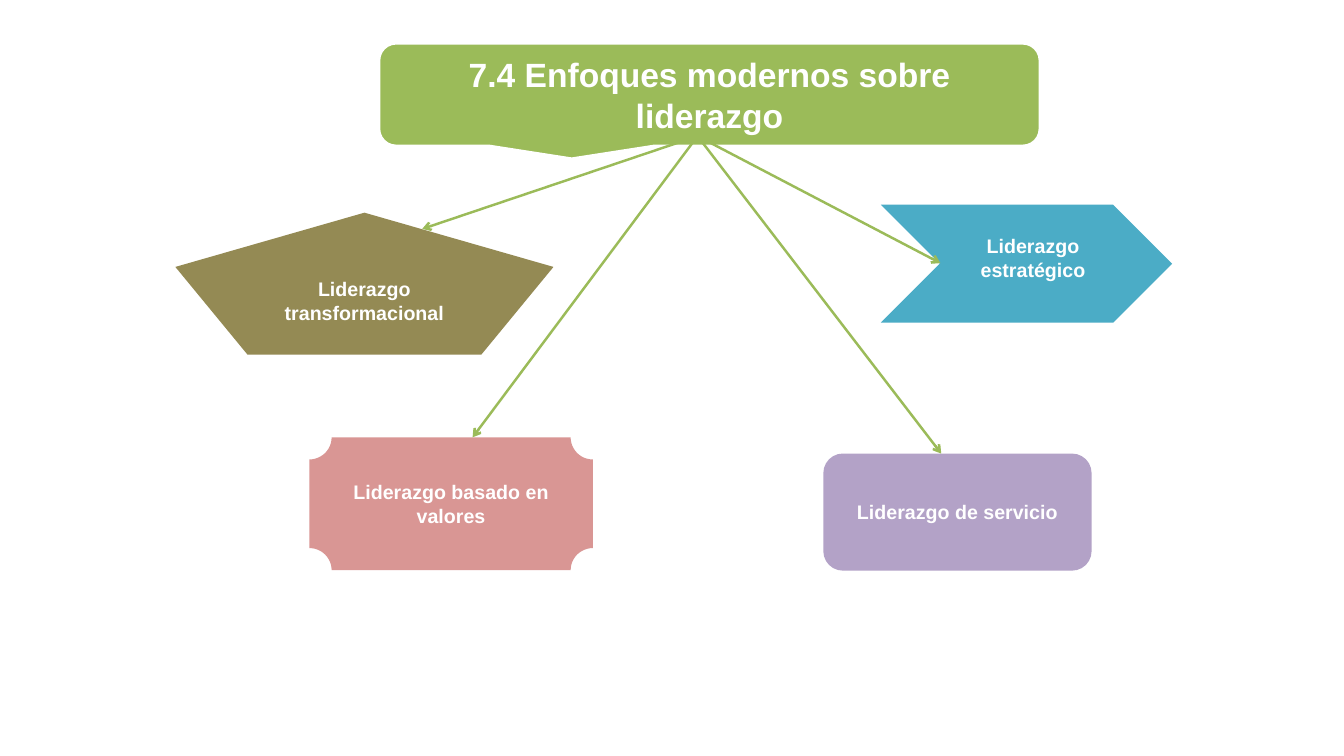
import pptx
import pptx.util
from lxml import etree
from pptx.dml.color import RGBColor
from pptx.enum.shapes import MSO_CONNECTOR, MSO_SHAPE
from pptx.enum.text import MSO_ANCHOR, MSO_AUTO_SIZE, PP_ALIGN
from pptx.oxml.ns import qn

Cm, Pt = pptx.util.Cm, pptx.util.Pt

WHITE = RGBColor(0xFF, 0xFF, 0xFF)
GREEN = RGBColor(0x9B, 0xBB, 0x59)
PURPLE = RGBColor(0xB3, 0xA2, 0xC7)
BLUE = RGBColor(0x4B, 0xAC, 0xC6)
PINK = RGBColor(0xD9, 0x96, 0x94)
OLIVE = RGBColor(0x94, 0x8A, 0x54)


def write_text(sp, text, size):
    tf = sp.text_frame
    tf.text = text
    tf.word_wrap = True
    p = tf.paragraphs[0]
    p.alignment = PP_ALIGN.CENTER
    p.font.name = "Arial"
    p.font.size = Pt(size)
    p.font.bold = True
    p.font.color.rgb = WHITE
    return tf


def add_filled_shape(kind, box, color):
    sp = s.shapes.add_shape(kind, *map(Cm, box))
    sp.shadow.inherit = False
    sp.fill.solid()
    sp.fill.fore_color.rgb = color
    sp.line.fill.background()
    return sp


prs = pptx.Presentation()
prs.slide_width, prs.slide_height = Cm(33.87), Cm(19.05)
s = prs.slides.add_slide(prs.slide_layouts[5])

# Title on its callout
callout = add_filled_shape(
    MSO_SHAPE.ROUNDED_RECTANGULAR_CALLOUT, (9.55, 1.09, 16.66, 2.59), GREEN)
callout.line.color.rgb = WHITE
callout.line.width = Pt(2)

title = s.shapes.title
title.left, title.top, title.width, title.height = map(Cm, (9.75, 1.09, 16.26, 2.59))
tf = write_text(title, "7.4 Enfoques modernos sobre liderazgo", 24)
tf.auto_size = MSO_AUTO_SIZE.NONE
tf.vertical_anchor = MSO_ANCHOR.MIDDLE
s.shapes._spTree.append(title._element)  # bring the title in front of the callout

# Leadership approaches
approaches = [
    (MSO_SHAPE.ROUNDED_RECTANGLE, (20.75, 11.43, 6.76, 2.95), PURPLE, "Liderazgo de servicio"),
    (MSO_SHAPE.CHEVRON, (22.2, 5.16, 7.34, 2.97), BLUE, None),
    (MSO_SHAPE.PLAQUE, (7.8, 11.02, 7.14, 3.35), PINK, "Liderazgo basado en valores"),
    (MSO_SHAPE.REGULAR_PENTAGON, (4.42, 5.36, 9.53, 3.58), OLIVE, "Liderazgo transformacional"),
]
for kind, box, color, text in approaches:
    sp = add_filled_shape(kind, box, color)
    if text:
        write_text(sp, text, 14).vertical_anchor = MSO_ANCHOR.MIDDLE

# Arrows fanning out from the callout
for x, y in [(10.64, 5.77), (23.72, 11.43), (11.91, 11.02), (23.7, 6.63)]:
    arrow = s.shapes.add_connector(
        MSO_CONNECTOR.STRAIGHT, Cm(17.58), Cm(3.43), Cm(x), Cm(y))
    arrow.line.color.rgb = GREEN
    arrow.line.width = Pt(1.75)
    etree.SubElement(arrow.line._get_or_add_ln(), qn("a:tailEnd"), type="arrow")
    etree.SubElement(arrow._element.spPr, qn("a:effectLst"))

# Label over the chevron
label = s.shapes.add_textbox(Cm(24.08), Cm(5.77), Cm(3.91), Cm(1.45))
write_text(label, "Liderazgo estratégico", 14).auto_size = MSO_AUTO_SIZE.SHAPE_TO_FIT_TEXT

prs.save("out.pptx")
